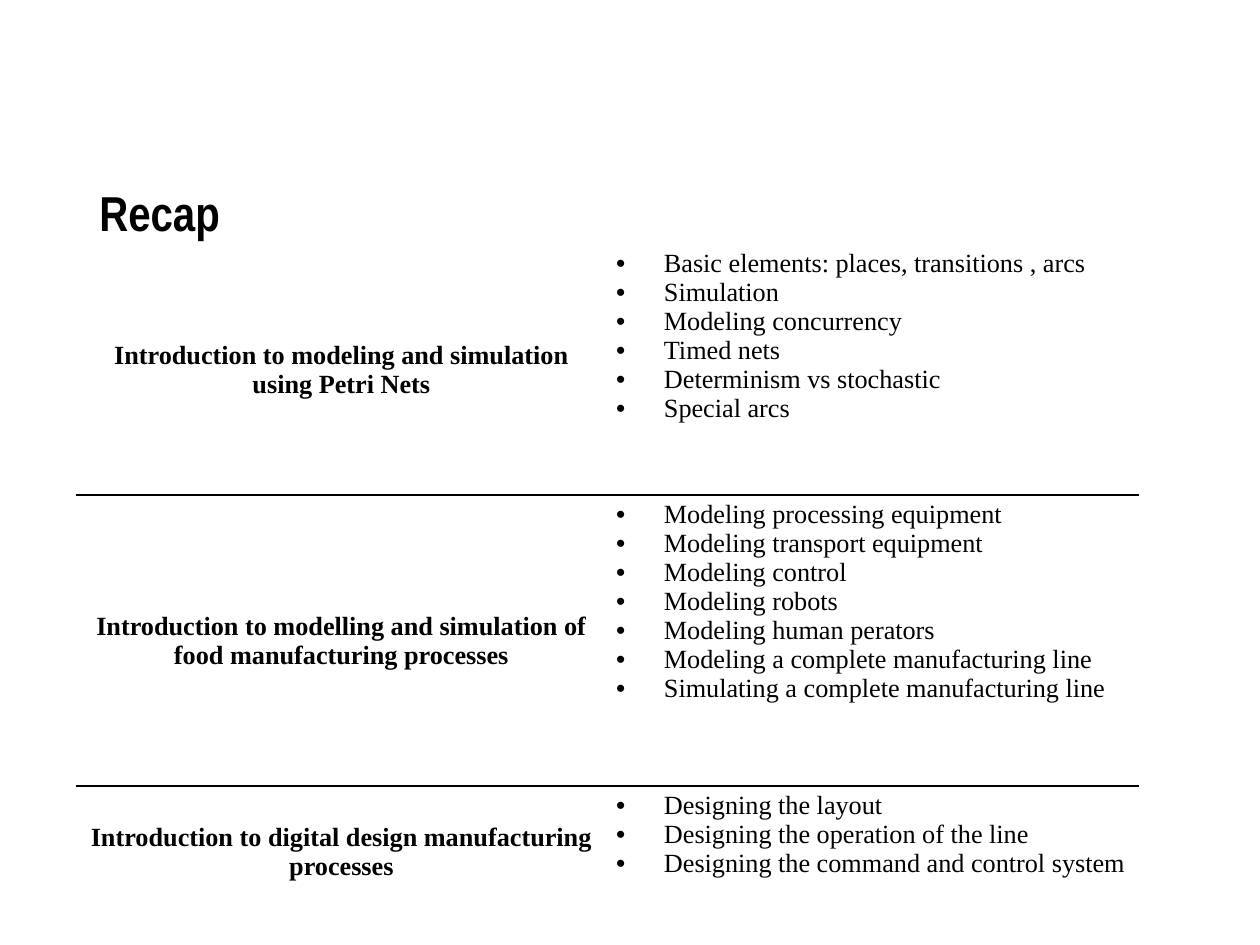
from typing import NamedTuple

from lxml.etree import SubElement
from pptx import Presentation
from pptx.dml.color import RGBColor
from pptx.enum.text import MSO_ANCHOR, PP_ALIGN
from pptx.oxml.ns import qn
from pptx.util import Inches, Pt


class Topic(NamedTuple):
    name: str
    points: list[str]
    height: float


TOPICS = [
    Topic("Introduction to modeling and simulation using Petri Nets",
          ["Basic elements: places, transitions , arcs", "Simulation",
           "Modeling concurrency", "Timed nets", "Determinism vs stochastic",
           "Special arcs"], 1.99),
    Topic("Introduction to modelling and simulation of food manufacturing processes",
          ["Modeling processing equipment", "Modeling transport equipment",
           "Modeling control", "Modeling robots", "Modeling human perators",
           "Modeling a complete manufacturing line",
           "Simulating a complete manufacturing line"], 2.31),
    Topic("Introduction to digital design manufacturing processes",
          ["Designing the layout", "Designing the operation of the line",
           "Designing the command and control system"], 1.04),
]
INK = "000000"
TITLE = {"name": "Arial Narrow", "size": Pt(28), "bold": True}
HEAD = {"name": "Times New Roman", "size": Pt(15), "bold": True}
BODY = HEAD | {"bold": False}
PAD = {"margin_left": Inches(0.07), "margin_right": Inches(0.07),
       "margin_top": Inches(0.04), "margin_bottom": Inches(0.04)}
FLAGS = {"first_row": False, "horz_banding": False}


def apply(item, values: dict) -> None:
    for key, value in values.items():
        setattr(item, key, value)


def paint(font, color: str) -> None:
    font.color.rgb = RGBColor.from_string(color)


def write(para, text: str, style: dict) -> None:
    run = para.add_run()
    run.text = text
    for font in (para.font, run.font):
        apply(font, style)
        paint(font, INK)


def add_bullet(para) -> None:
    props = para._p.get_or_add_pPr()
    props.set("marL", str(Inches(0.38)))
    props.set("indent", str(-Inches(0.38)))
    SubElement(props, qn("a:buFont"), typeface="Arial")
    SubElement(props, qn("a:buChar"), char="•")


def set_rules(cell, above: bool, below: bool) -> None:
    """Draw the chosen horizontal borders and clear the others."""
    props = cell._tc.get_or_add_tcPr()
    sides = {"lnL": False, "lnR": False, "lnT": above, "lnB": below}
    for place, (side, shown) in enumerate(sides.items()):
        line = SubElement(props, qn(f"a:{side}"), w=str(Pt(1)))
        if shown:
            fill = SubElement(line, qn("a:solidFill"))
            SubElement(fill, qn("a:srgbClr"), val=INK)
        else:
            SubElement(line, qn("a:noFill"))
        props.insert(place, line)


def add_title(slide, text: str) -> None:
    box = slide.shapes.add_textbox(
        Inches(0.69), Inches(1.15), Inches(8.62), Inches(1.06))
    frame = box.text_frame
    apply(frame, {"word_wrap": True, "vertical_anchor": MSO_ANCHOR.MIDDLE})
    write(frame.paragraphs[0], text, TITLE)


def add_topics(slide, topics: list[Topic]) -> None:
    total = sum(topic.height for topic in topics)
    table = slide.shapes.add_table(
        len(topics), 2, Inches(0.6), Inches(1.94),
        Inches(8.44), Inches(total)).table
    apply(table, FLAGS)
    last = len(topics) - 1
    for row, topic in enumerate(topics):
        table.rows[row].height = Inches(topic.height)
        head, body = table.cell(row, 0), table.cell(row, 1)
        for cell in (head, body):
            apply(cell, PAD)
            cell.fill.background()
            set_rules(cell, row > 0, row < last)
        head.vertical_anchor = MSO_ANCHOR.MIDDLE
        para = head.text_frame.paragraphs[0]
        para.alignment = PP_ALIGN.CENTER
        write(para, topic.name, HEAD)
        frame = body.text_frame
        for index, point in enumerate(topic.points):
            para = frame.add_paragraph() if index else frame.paragraphs[0]
            add_bullet(para)
            write(para, point, BODY)


def main() -> None:
    deck = Presentation()
    apply(deck, {"slide_width": Inches(10), "slide_height": Inches(7.5)})
    slide = deck.slides.add_slide(deck.slide_layouts[6])
    add_title(slide, "Recap")
    add_topics(slide, TOPICS)
    deck.save("out.pptx")


if __name__ == "__main__":
    main()
